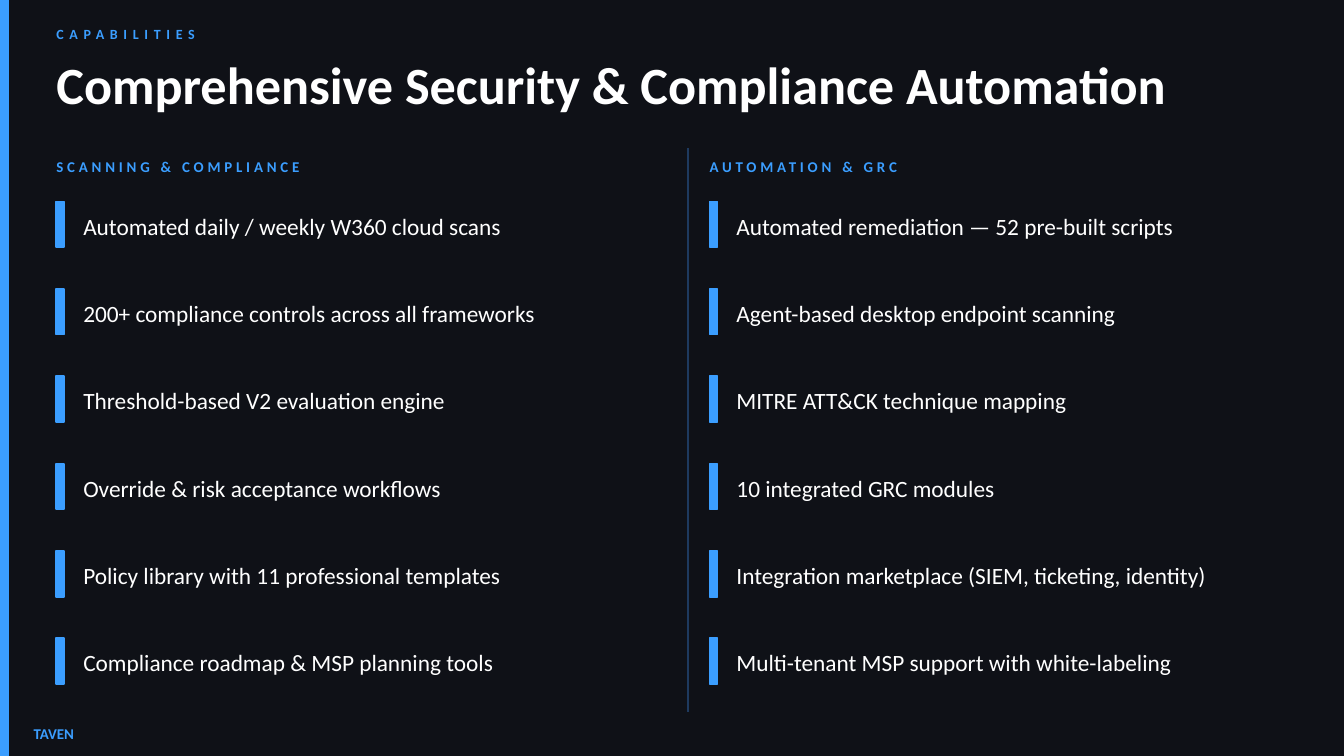
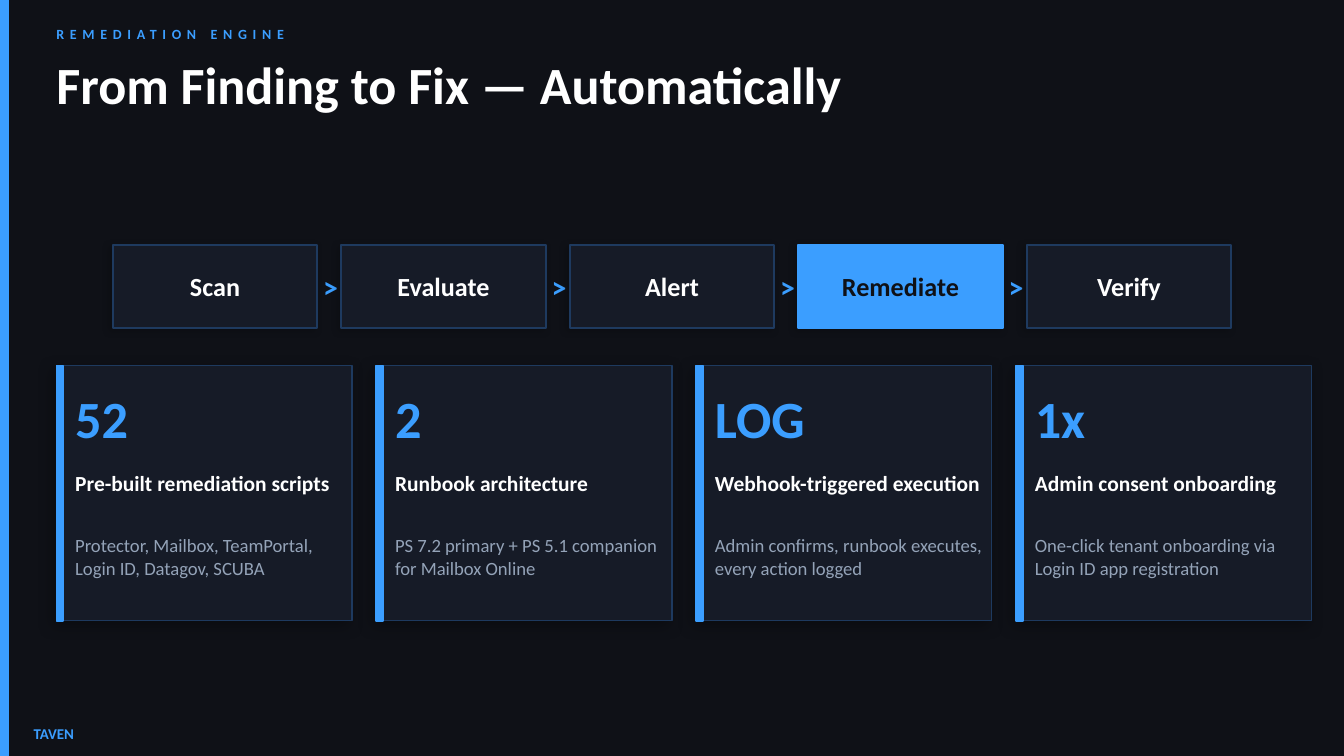
"""Build two dark slides on security automation capabilities and remediation."""
from dataclasses import dataclass

from lxml.etree import SubElement
from pptx import Presentation
from pptx.dml.color import RGBColor
from pptx.enum.shapes import MSO_CONNECTOR as Connector, MSO_SHAPE as Preset
from pptx.enum.text import MSO_ANCHOR as Anchor, PP_ALIGN as Align
from pptx.oxml.ns import qn
from pptx.util import Inches, Pt


@dataclass(frozen=True)
class Theme:
    font: str = "Calibri"
    background: str = "0F1117"
    accent: str = "3B9EFF"
    panel: str = "161B27"
    border: str = "1E3A5F"
    white: str = "FFFFFF"
    muted: str = "94A3B8"
    eyebrow: float = 7.5
    label: float = 8
    detail: float = 10
    caption: float = 11.5
    body: float = 12.5
    step: float = 14
    arrow: float = 16
    title: float = 28


theme = Theme()
WIDTH = 10
HEIGHT = WIDTH * 9 / 16
MARGIN = 0.42


def add_box(slide, bounds, fill=None, line=None, weight=1, shadow=None):
    bounds = [Inches(length) for length in bounds]
    if fill is None:
        return slide.shapes.add_textbox(*bounds)
    shape = slide.shapes.add_shape(Preset.RECTANGLE, *bounds)
    shape.fill.solid()
    shape.fill.fore_color.rgb = RGBColor.from_string(fill)
    shape.line.color.rgb = RGBColor.from_string(line or fill)
    shape.line.width = Pt(weight)
    shape.shadow.inherit = False
    if shadow:
        opacity, blur, distance = shadow
        effects = shape._element.spPr.find(qn("a:effectLst"))
        outer = SubElement(effects, qn("a:outerShdw"), blurRad=str(Pt(blur)),
                           dist=str(Pt(distance)), dir=str(135 * 60000),
                           algn="bl", rotWithShape="0")
        color = SubElement(outer, qn("a:srgbClr"), val="000000")
        SubElement(color, qn("a:alpha"), val=str(opacity * 1000))
    return shape


def write_text(shape, text, size, color, bold=True, align=Align.LEFT, spacing=0):
    frame = shape.text_frame
    frame.word_wrap = True
    frame.vertical_anchor = Anchor.MIDDLE
    frame.margin_left = frame.margin_right = 0
    frame.margin_top = frame.margin_bottom = 0
    paragraph = frame.paragraphs[0]
    paragraph.alignment = align
    run = paragraph.add_run()
    run.text = text
    run.font.name = theme.font
    run.font.size = Pt(size)
    run.font.bold = bold
    run.font.color.rgb = RGBColor.from_string(color)
    if spacing:
        run._r.get_or_add_rPr().set("spc", str(spacing * 100))


presentation = Presentation()
presentation.slide_width = Inches(WIDTH)
presentation.slide_height = Inches(HEIGHT)

headings = [
    ("CAPABILITIES", "Comprehensive Security & Compliance Automation"),
    ("REMEDIATION ENGINE", "From Finding to Fix — Automatically"),
]
slides = []
for eyebrow, title in headings:
    slide = presentation.slides.add_slide(presentation.slide_layouts[6])
    slide.background.fill.solid()
    slide.background.fill.fore_color.rgb = RGBColor.from_string(theme.background)
    add_box(slide, (0, 0, 0.06, HEIGHT), theme.accent)
    write_text(add_box(slide, (0.25, 5.35, 1, 0.22)), "TAVEN", theme.label, theme.accent)
    write_text(add_box(slide, (MARGIN, 0.14, 6, 0.22)), eyebrow,
               theme.eyebrow, theme.accent, spacing=3)
    write_text(add_box(slide, (MARGIN, 0.32, 9.4, 0.6)), title, theme.title, theme.white)
    slides.append(slide)
capabilities, remediation = slides

divider = capabilities.shapes.add_connector(
    Connector.STRAIGHT, Inches(5.12), Inches(1.1), Inches(5.12), Inches(5.3))
divider.line.color.rgb = RGBColor.from_string(theme.border)
divider.line.width = Pt(1)
SubElement(divider._element.spPr, qn("a:effectLst"))

columns = [
    (MARGIN, 4.36, "SCANNING & COMPLIANCE", [
        "Automated daily / weekly W360 cloud scans",
        "200+ compliance controls across all frameworks",
        "Threshold-based V2 evaluation engine",
        "Override & risk acceptance workflows",
        "Policy library with 11 professional templates",
        "Compliance roadmap & MSP planning tools",
    ]),
    (5.28, 4.2, "AUTOMATION & GRC", [
        "Automated remediation — 52 pre-built scripts",
        "Agent-based desktop endpoint scanning",
        "MITRE ATT&CK technique mapping",
        "10 integrated GRC modules",
        "Integration marketplace (SIEM, ticketing, identity)",
        "Multi-tenant MSP support with white-labeling",
    ]),
]
for left, width, heading, items in columns:
    write_text(add_box(capabilities, (left, 1.1, 4.3, 0.28)), heading,
               theme.label, theme.accent, spacing=2)
    for row, item in enumerate(items):
        top = 1.42 + row * 0.65
        add_box(capabilities, (left, top + 0.08, 0.06, 0.34), theme.accent)
        write_text(add_box(capabilities, (left + 0.2, top, width, 0.52)), item,
                   theme.body, theme.white, bold=False)

steps = ["Scan", "Evaluate", "Alert", "Remediate", "Verify"]
for index, step in enumerate(steps):
    left = 0.84 + index * 1.7
    if step == "Remediate":
        fill, line, color = theme.accent, theme.accent, theme.background
    else:
        fill, line, color = theme.panel, theme.border, theme.white
    box = add_box(remediation, (left, 1.82, 1.52, 0.62), fill, line, shadow=(20, 4, 2))
    write_text(box, step, theme.step, color, align=Align.CENTER)
    if index < len(steps) - 1:
        write_text(add_box(remediation, (left + 1.53, 1.82, 0.18, 0.62)), ">",
                   theme.arrow, theme.accent, align=Align.CENTER)

cards = [
    ("52", "Pre-built remediation scripts",
     "Protector, Mailbox, TeamPortal, Login ID, Datagov, SCUBA"),
    ("2", "Runbook architecture",
     "PS 7.2 primary + PS 5.1 companion for Mailbox Online"),
    ("LOG", "Webhook-triggered execution",
     "Admin confirms, runbook executes, every action logged"),
    ("1x", "Admin consent onboarding",
     "One-click tenant onboarding via Login ID app registration"),
]
for index, (figure, caption, detail) in enumerate(cards):
    left = MARGIN + index * 2.38
    add_box(remediation, (left, 2.72, 2.2, 1.9), theme.panel, theme.border,
            weight=0.75, shadow=(30, 8, 3))
    add_box(remediation, (left, 2.72, 0.05, 1.9), theme.accent)
    for top, height, text, size, color, bold in [
        (2.82, 0.58, figure, theme.title, theme.accent, True),
        (3.4, 0.38, caption, theme.caption, theme.white, True),
        (3.78, 0.72, detail, theme.detail, theme.muted, False),
    ]:
        write_text(add_box(remediation, (left + 0.14, top, 2, height)),
                   text, size, color, bold)

presentation.save("out.pptx")
